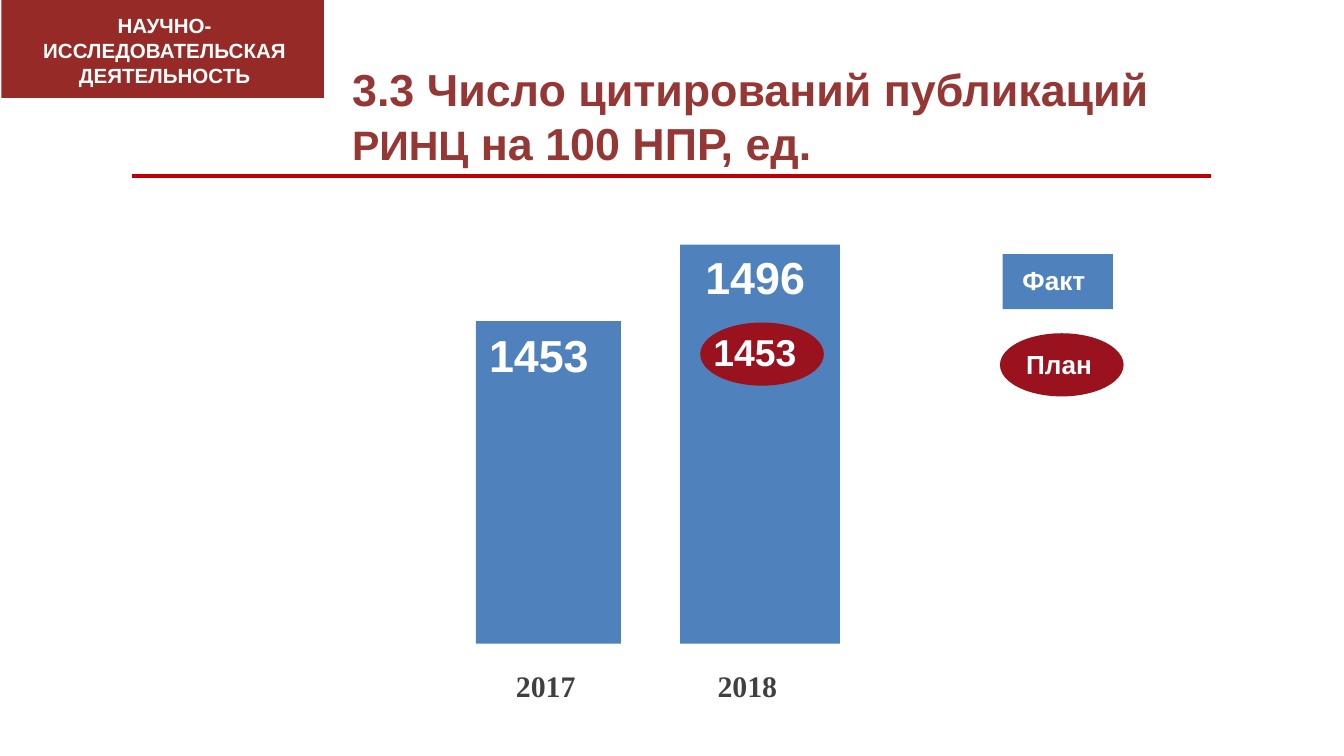
from dataclasses import dataclass

from lxml import etree
from pptx import Presentation
from pptx.dml.color import RGBColor
from pptx.enum.shapes import MSO_CONNECTOR as Connector, MSO_SHAPE as Shape
from pptx.enum.text import MSO_ANCHOR as Anchor, MSO_AUTO_SIZE as AutoSize, PP_ALIGN as Align
from pptx.oxml.ns import qn
from pptx.util import Inches, Pt


@dataclass(frozen=True)
class Theme:
    title: RGBColor = RGBColor(0x95, 0x37, 0x35)
    rule: RGBColor = RGBColor(0xC0, 0x00, 0x00)
    banner: RGBColor = RGBColor(0x95, 0x2A, 0x27)
    fact: RGBColor = RGBColor(0x4F, 0x81, 0xBD)
    plan: RGBColor = RGBColor(0x99, 0x12, 0x1E)
    light: RGBColor = RGBColor(0xFF, 0xFF, 0xFF)
    dark: RGBColor = RGBColor(0x40, 0x40, 0x40)
    big: int = 24
    acronym: int = 22
    value: int = 20
    year: int = 16
    key: int = 14
    section: int = 11
    sans: str = "Arial"
    serif: str = "Times New Roman"


THEME = Theme()


def place(*lengths):
    return [Inches(length) for length in lengths]


def apply_format(target, values):
    for name, value in values.items():
        setattr(target, name, value)


def style_font(font, size, color, name=THEME.sans):
    apply_format(font, {"name": name, "size": Pt(size), "bold": True})
    font.color.rgb = color


def add_title(slide, parts):
    title = slide.shapes.title
    title.left, title.top, title.width, title.height = place(2.62, 0.46, 6.55, 0.78)
    apply_format(title.text_frame, {
        "margin_left": 0, "margin_top": 0, "margin_right": 0, "margin_bottom": 0,
        "word_wrap": True, "auto_size": AutoSize.NONE, "vertical_anchor": Anchor.TOP,
    })
    para = title.text_frame.paragraphs[0]
    para.alignment = Align.LEFT
    for text, size in parts:
        span = para.add_run()
        span.text = text
        style_font(span.font, size, THEME.title)


def add_rule(slide):
    rule = slide.shapes.add_connector(
        Connector.STRAIGHT, *place(9.01, 1.31, 0.98, 1.31))
    rule.line.color.rgb = THEME.rule
    rule.line.width = Pt(2)
    etree.SubElement(rule.element.spPr, qn("a:effectLst"))


def add_block(slide, kind, bounds, color):
    block = slide.shapes.add_shape(kind, *place(*bounds))
    block.shadow.inherit = False
    block.fill.solid()
    block.fill.fore_color.rgb = color
    block.line.fill.background()


def add_label(slide, text, bounds, size, color=THEME.light, name=THEME.sans,
              align=Align.LEFT, tab=None):
    box = slide.shapes.add_textbox(*place(*bounds))
    box.text_frame.word_wrap = True
    para = box.text_frame.paragraphs[0]
    para.text = text
    para.alignment = align
    if tab:
        stops = etree.SubElement(para._p.get_or_add_pPr(), qn("a:tabLst"))
        etree.SubElement(stops, qn("a:tab"), pos=str(Inches(tab)), algn="l")
    style_font(para.runs[0].font, size, color, name)


def main():
    # Widescreen page, 16:9
    deck = Presentation()
    deck.slide_width = Inches(10)
    deck.slide_height = deck.slide_width * 9 // 16
    slide = deck.slides.add_slide(deck.slide_layouts[5])

    # Heading
    add_title(slide, [
        ("3.3 Число цитирований публикаций ", THEME.big),
        ("РИНЦ", THEME.acronym),
        (" на 100 НПР, ед.", THEME.big),
    ])
    add_rule(slide)

    # Section banner
    add_block(slide, Shape.RECTANGLE, (0.01, 0, 2.4, 0.73), THEME.banner)
    add_label(slide, "НАУЧНО-ИССЛЕДОВАТЕЛЬСКАЯ ДЕЯТЕЛЬНОСТЬ", (0.05, 0.05, 2.35, 0.66),
              THEME.section, align=Align.CENTER)

    # Bars with actual values, and the years below
    bars = [
        ("1453", (3.54, 2.39, 1.08, 2.4), (3.54, 2.39, 1.08, 0.5)),
        ("1496", (5.06, 1.82, 1.19, 2.97), (5.15, 1.81, 1.04, 0.5)),
    ]
    for value, bar, label in bars:
        add_block(slide, Shape.RECTANGLE, bar, THEME.fact)
        add_label(slide, value, label, THEME.big)
    add_label(slide, "2017\t2018", (3.74, 4.92, 2.49, 0.37), THEME.year,
              THEME.dark, THEME.serif, tab=1.5)

    # Planned value
    add_block(slide, Shape.OVAL, (5.21, 2.4, 0.92, 0.47), THEME.plan)
    add_label(slide, "1453", (5.21, 2.4, 0.92, 0.44), THEME.value)

    # Legend
    add_block(slide, Shape.RECTANGLE, (7.46, 1.89, 0.82, 0.41), THEME.fact)
    add_label(slide, "Факт", (7.51, 1.92, 0.73, 0.34), THEME.key)
    add_block(slide, Shape.OVAL, (7.44, 2.48, 0.92, 0.47), THEME.plan)
    add_label(slide, "План", (7.39, 2.54, 0.98, 0.34), THEME.key, align=Align.CENTER)

    deck.save("out.pptx")


if __name__ == "__main__":
    main()
